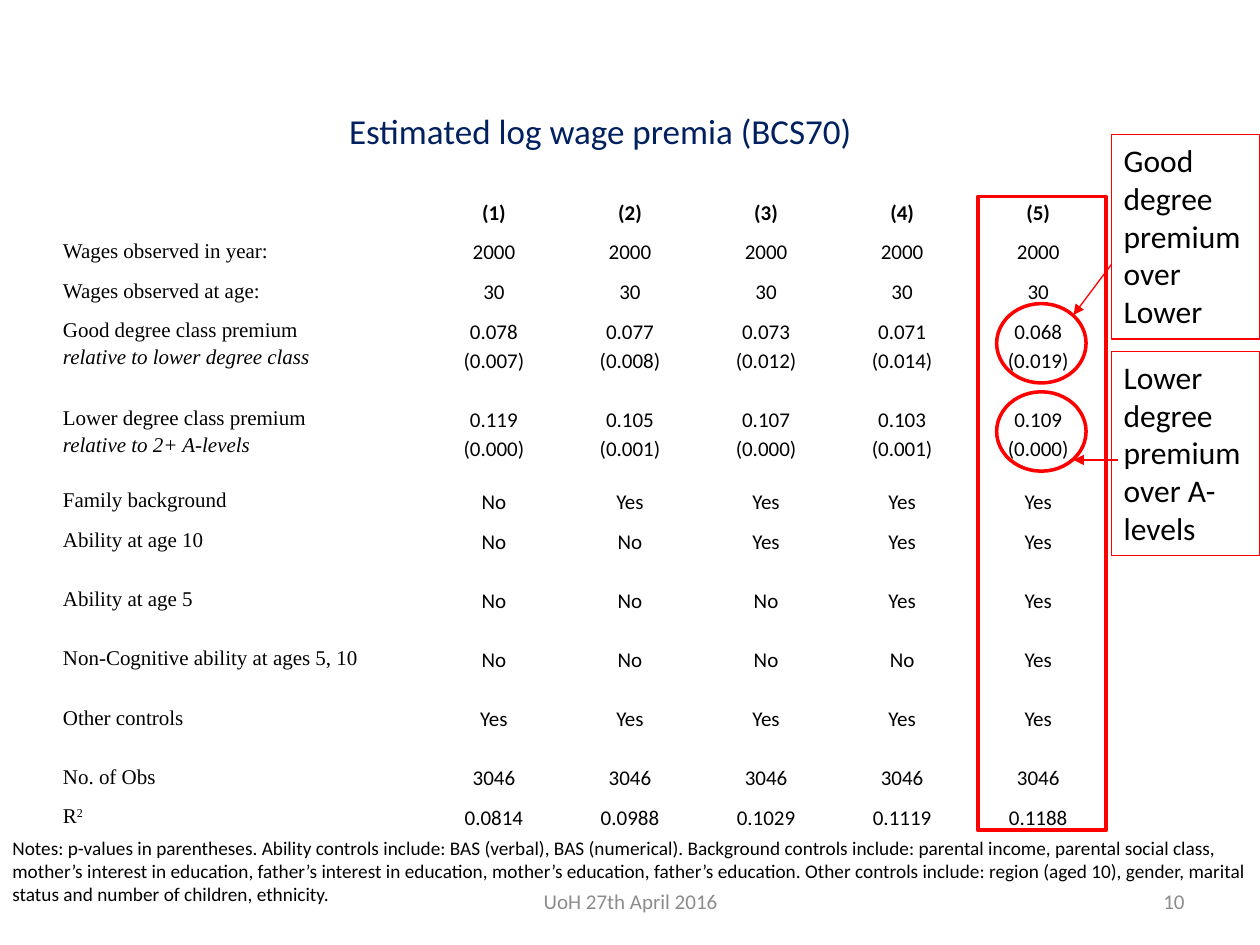
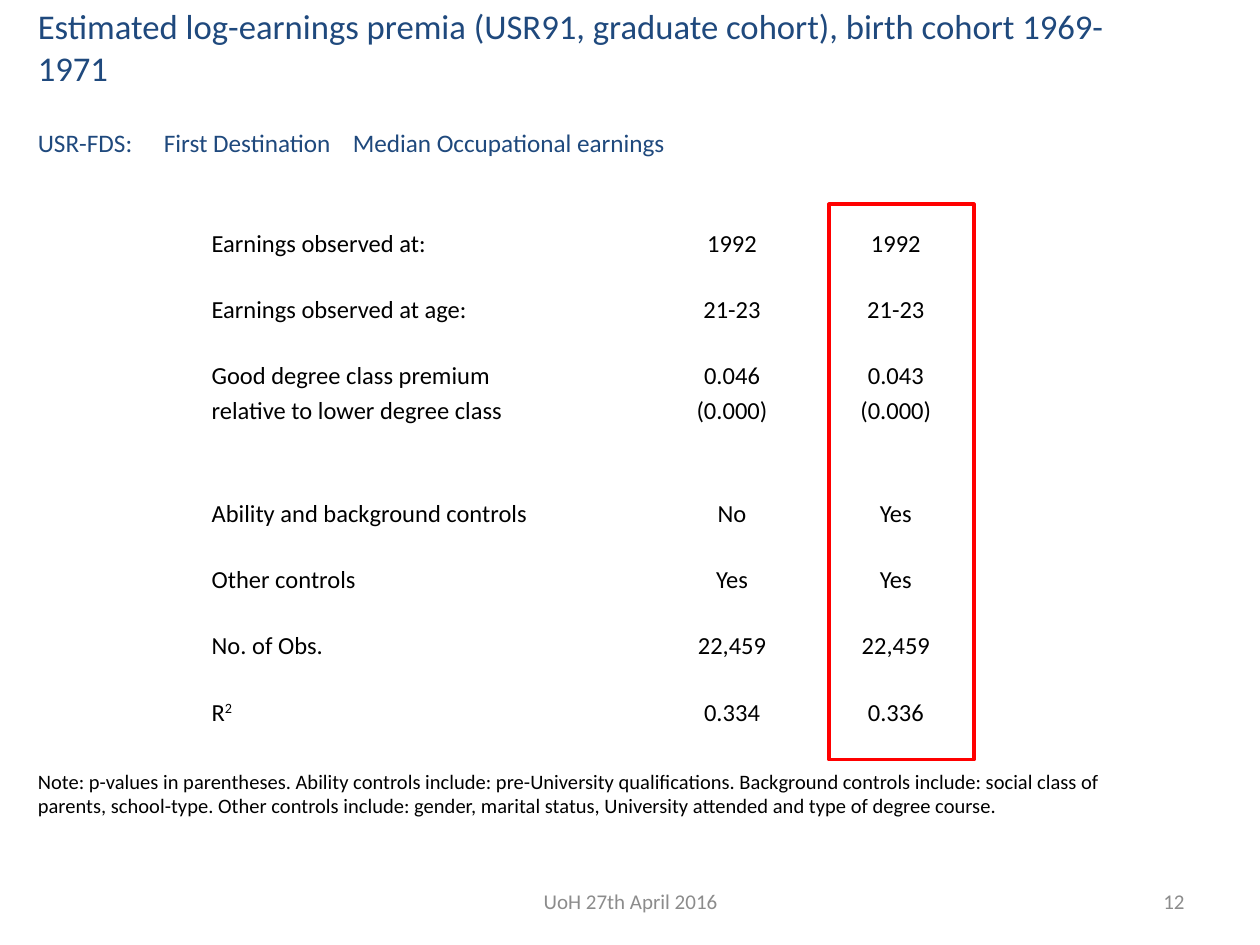
from dataclasses import dataclass

from lxml import etree
from pptx import Presentation
from pptx import util as u
from pptx.dml.color import RGBColor
from pptx.enum import shapes, text
from pptx.oxml import ns

COLUMNS, ROWS = 100, 75
SLIDE_WIDTH, SLIDE_HEIGHT = u.Inches(10), u.Inches(7.5)
BLACK, WHITE, RED, GREY = "000000", "FFFFFF", "FF0000", "8C8C8C"
NAVY, BLUE = "002060", "1F497D"
SANS, SERIF = "Calibri", "Times New Roman"
LEFT, CENTER, RIGHT, JUSTIFY = (
    text.PP_ALIGN.LEFT, text.PP_ALIGN.CENTER, text.PP_ALIGN.RIGHT, text.PP_ALIGN.JUSTIFY)
RECTANGLE, ELLIPSE = shapes.MSO_SHAPE.RECTANGLE, shapes.MSO_SHAPE.OVAL
FOOTER = "UoH 27th April 2016"


@dataclass(frozen=True)
class Box:
    """A place on the slide, in grid columns and rows."""
    left: float
    top: float
    width: float
    height: float

    def lengths(self) -> tuple:
        return x(self.left), y(self.top), x(self.width), y(self.height)


@dataclass(frozen=True)
class Outline:
    kind: shapes.MSO_SHAPE
    box: Box
    weight: float = 2
    caption: str = ""


@dataclass(frozen=True)
class Arrow:
    start: tuple
    end: tuple


@dataclass(frozen=True)
class Estimates:
    """A results table: one tuple per row, with its label first."""
    box: Box
    label_width: float
    value_width: float
    heights: tuple
    rows: tuple
    size: float
    label_font: str = SANS
    bold_header: bool = False


def x(columns: float) -> int:
    return round(SLIDE_WIDTH * columns / COLUMNS)


def y(rows: float) -> int:
    return round(SLIDE_HEIGHT * rows / ROWS)


def rgb(color: str) -> RGBColor:
    return RGBColor.from_string(color)


def write(frame, content: str, *, size: float, color: str = BLACK, font: str = SANS,
          bold: bool = False, align=LEFT, spacing: float = 1, before: float = 0,
          italic_tail: bool = False, add: bool = False) -> None:
    """Write each line as a paragraph; what follows ^ is superscript."""
    for index, line in enumerate(content.split("\n")):
        paragraph = frame.add_paragraph() if add or index else frame.paragraphs[0]
        paragraph.alignment, paragraph.line_spacing = align, spacing
        paragraph.space_before = u.Pt(before)
        paragraph.font.size = u.Pt(size)
        for part, piece in enumerate(line.split("^")):
            run = paragraph.add_run()
            run.text = piece
            run.font.size, run.font.name, run.font.bold = u.Pt(size), font, bold
            run.font.italic = italic_tail and index > 0
            run.font.color.rgb = rgb(color)
            if part:
                run.font.size = u.Pt(size)
                run._r.get_or_add_rPr().set("baseline", "30000")


def add_text(slide, box: Box, content: str, anchor=text.MSO_ANCHOR.TOP, **style) -> None:
    frame = slide.shapes.add_textbox(*box.lengths()).text_frame
    frame.word_wrap, frame.vertical_anchor = True, anchor
    write(frame, content, **style)


def start_slide(presentation, number: int, title_box: Box, indent: float, drop: float):
    """Add a slide with its footer and return it with the title's text frame."""
    slide = presentation.slides.add_slide(presentation.slide_layouts[5])
    title = slide.shapes.title
    title.left, title.top, title.width, title.height = title_box.lengths()
    frame = title.text_frame
    frame.auto_size, frame.word_wrap = text.MSO_AUTO_SIZE.NONE, True
    frame.vertical_anchor = text.MSO_ANCHOR.TOP
    frame.margin_left, frame.margin_top = x(indent), y(drop)
    for box, content, align in ((Box(34.2, 69.5, 31.7, 4), FOOTER, CENTER),
                                (Box(71.7, 69.5, 23.3, 4), str(number), RIGHT)):
        add_text(slide, box, content, text.MSO_ANCHOR.MIDDLE,
                 size=12, color=GREY, align=align)
    return slide, frame


def set_borders(cell, bottom: float) -> None:
    properties = cell._tc.get_or_add_tcPr()
    for side, weight in (("L", 1), ("R", 1), ("T", 1), ("B", bottom)):
        line = etree.SubElement(properties, ns.qn(f"a:ln{side}"), w=str(u.Pt(weight)))
        fill = etree.SubElement(line, ns.qn("a:solidFill"))
        etree.SubElement(fill, ns.qn("a:srgbClr"), val=WHITE)


def add_estimates(slide, estimates: Estimates) -> None:
    rows = estimates.rows
    table = slide.shapes.add_table(len(rows), len(rows[0]), *estimates.box.lengths()).table
    table.first_row = table.horz_banding = False
    for index, column in enumerate(table.columns):
        column.width = x(estimates.value_width if index else estimates.label_width)
    for row_index, (row, height) in enumerate(zip(rows, estimates.heights)):
        table.rows[row_index].height = y(height)
        for column_index, value in enumerate(row):
            cell = table.cell(row_index, column_index)
            cell.margin_left = cell.margin_right = x(0.7)
            cell.margin_top = cell.margin_bottom = 0
            set_borders(cell, 1 if row_index else 3)
            cell.fill.solid()
            cell.fill.fore_color.rgb = rgb(WHITE)
            is_label = column_index == 0
            if value:
                write(cell.text_frame, value, size=estimates.size, spacing=1.15,
                      font=estimates.label_font if is_label else SANS,
                      align=JUSTIFY if is_label else CENTER,
                      bold=estimates.bold_header and row_index == 0,
                      italic_tail=is_label and estimates.label_font == SERIF)


def add_outline(slide, outline: Outline) -> None:
    shape = slide.shapes.add_shape(outline.kind, *outline.box.lengths())
    shape.shadow.inherit = False
    shape.fill.background()
    shape.line.color.rgb, shape.line.width = rgb(RED), u.Pt(outline.weight)
    if outline.caption:
        shape.text_frame.vertical_anchor = text.MSO_ANCHOR.TOP
        write(shape.text_frame, outline.caption, size=18)


def add_arrow(slide, arrow: Arrow) -> None:
    (left, top), (right, bottom) = arrow.start, arrow.end
    connector = slide.shapes.add_connector(
        shapes.MSO_CONNECTOR.STRAIGHT, x(left), y(top), x(right), y(bottom))
    connector.line.color.rgb, connector.line.width = rgb(RED), u.Pt(0.75)
    etree.SubElement(connector.line._get_or_add_ln(), ns.qn("a:tailEnd"), type="triangle")
    etree.SubElement(connector._element.spPr, ns.qn("a:effectLst"))


WAGES = Estimates(
    box=Box(4.3, 15.6, 83.5, 51.2), label_width=29.5, value_width=10.8, size=12,
    heights=(3.15,) * 3 + (7, 6.5, 3.15) + (4.7,) * 4 + (3.15,) * 2,
    label_font=SERIF, bold_header=True,
    rows=(
        ("", "(1)", "(2)", "(3)", "(4)", "(5)"),
        ("Wages observed in year:",) + ("2000",) * 5,
        ("Wages observed at age:",) + ("30",) * 5,
        ("Good degree class premium\nrelative to lower degree class",
         "0.078\n(0.007)", "0.077\n(0.008)", "0.073\n(0.012)", "0.071\n(0.014)",
         "0.068\n(0.019)"),
        ("Lower degree class premium\nrelative to 2+ A-levels",
         "0.119\n(0.000)", "0.105\n(0.001)", "0.107\n(0.000)", "0.103\n(0.001)",
         "0.109\n(0.000)"),
        ("Family background", "No") + ("Yes",) * 4,
        ("Ability at age 10",) + ("No",) * 2 + ("Yes",) * 3,
        ("Ability at age 5",) + ("No",) * 3 + ("Yes",) * 2,
        ("Non-Cognitive ability at ages 5, 10",) + ("No",) * 4 + ("Yes",),
        ("Other controls",) + ("Yes",) * 5,
        ("No. of Obs",) + ("3046",) * 5,
        ("R^2", "0.0814", "0.0988", "0.1029", "0.1119", "0.1188"),
    ))

EARNINGS = Estimates(
    box=Box(16.1, 17.8, 61.5, 42.7), label_width=35.5, value_width=13, size=14,
    heights=(5.27,) * 2 + (10.9,) + (5.27,) * 4,
    rows=(
        ("Earnings observed at:", "1992", "1992"),
        ("Earnings observed at age:", "21-23", "21-23"),
        ("Good degree class premium\nrelative to lower degree class",
         "0.046\n(0.000)", "0.043\n(0.000)"),
        ("Ability and background controls", "No", "Yes"),
        ("Other controls", "Yes", "Yes"),
        ("No. of Obs.", "22,459", "22,459"),
        ("R^2", "0.334", "0.336"),
    ))

WAGE_OUTLINES = (
    Outline(RECTANGLE, Box(77.6, 15.6, 10.2, 50.3)),
    Outline(RECTANGLE, Box(88.2, 10.7, 11.8, 16.2), 0.75, "Good degree premium over Lower"),
    Outline(RECTANGLE, Box(88.2, 27.9, 11.8, 16.2), 0.75, "Lower degree premium over A-levels"),
    Outline(ELLIPSE, Box(79.1, 24.1, 7.1, 6.3)),
    Outline(ELLIPSE, Box(79.1, 31.1, 7.1, 6.3)),
)
WAGE_ARROWS = (Arrow((88.2, 21), (85.2, 25)), Arrow((88.7, 36.5), (85.2, 36.5)))
WAGE_NOTES = (
    "Notes: p-values in parentheses. Ability controls include: BAS (verbal), BAS (numerical). "
    "Background controls include: parental income, parental social class, mother’s interest in "
    "education, father’s interest in education, mother’s education, father’s education. Other "
    "controls include: region (aged 10), gender, marital status and number of children, ethnicity.")
EARNINGS_NOTE = (
    "Note: p-values in parentheses. Ability controls include: pre-University qualifications. "
    "Background controls include: social class of parents, school-type. Other controls include: "
    "gender, marital status, University attended and type of degree course.")


def build_wage_slide(presentation) -> None:
    slide, title = start_slide(presentation, 10, Box(6.7, 0, 87.4, 68.5), indent=21, drop=8.7)
    write(title, "Estimated log wage premia (BCS70)", size=20, color=NAVY)
    add_estimates(slide, WAGES)
    add_text(slide, Box(0, 65.9, 100, 6.6), WAGE_NOTES, size=11)
    for outline in WAGE_OUTLINES:
        add_outline(slide, outline)
    for arrow in WAGE_ARROWS:
        add_arrow(slide, arrow)


def build_earnings_slide(presentation) -> None:
    slide, title = start_slide(presentation, 12, Box(2, 0, 87.4, 66), indent=1, drop=0.4)
    write(title, "Estimated log-earnings premia (USR91, graduate cohort), birth cohort 1969-1971",
          size=19.8, color=BLUE)
    write(title, "USR-FDS:\tFirst Destination\tMedian Occupational earnings",
          size=14.4, color=BLUE, before=22.5, add=True)
    write(title, EARNINGS_NOTE, size=11.7, before=349, add=True)
    add_estimates(slide, EARNINGS)
    add_outline(slide, Outline(RECTANGLE, Box(65.8, 16.2, 11.5, 44.1)))


def main() -> None:
    presentation = Presentation()
    presentation.slide_width, presentation.slide_height = SLIDE_WIDTH, SLIDE_HEIGHT
    build_wage_slide(presentation)
    build_earnings_slide(presentation)
    presentation.save("out.pptx")


if __name__ == "__main__":
    main()
